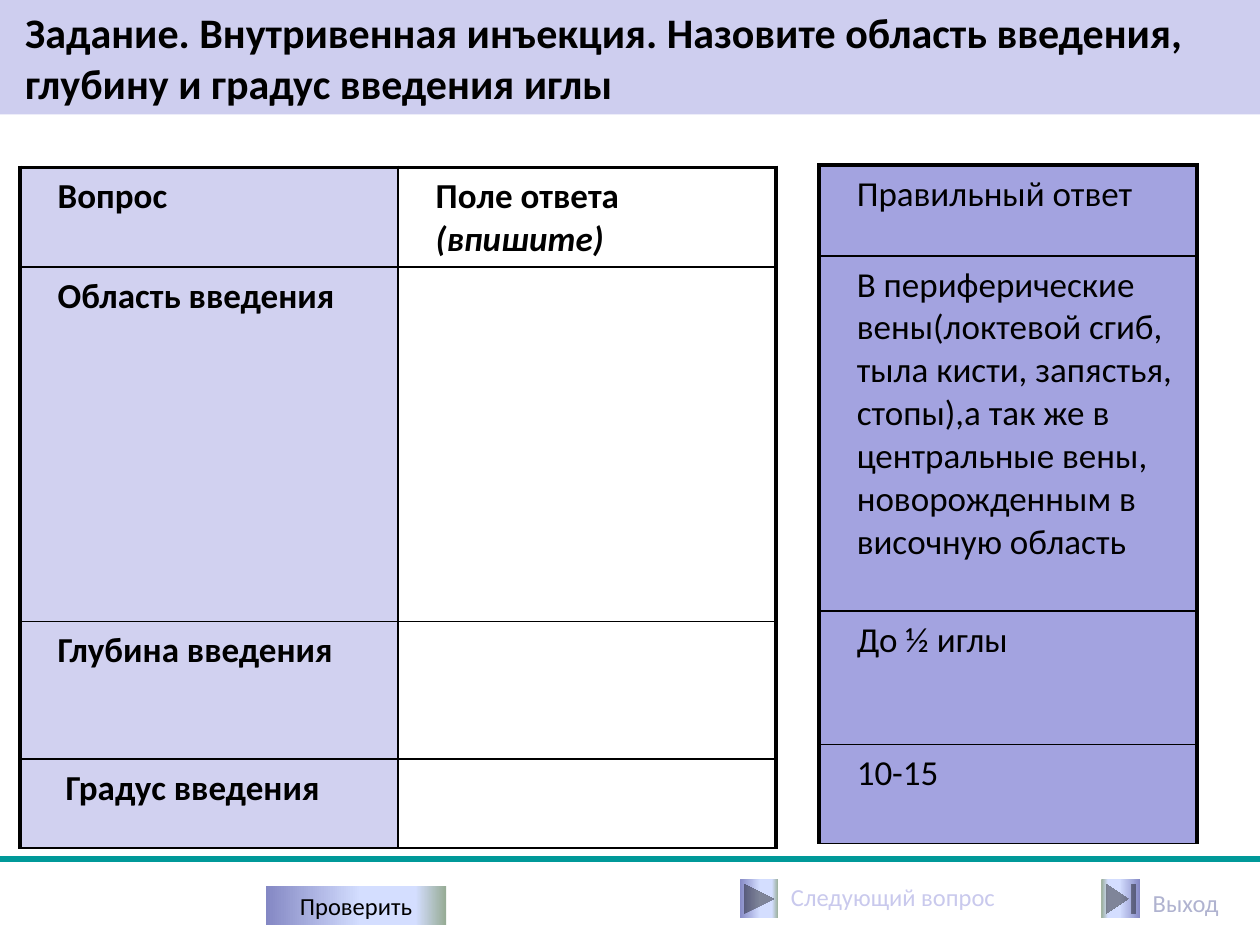
from pptx import Presentation
from pptx import util as u
from pptx.dml import color
from pptx.enum import shapes, text
from pptx.oxml import ns, parse_xml

Pt = u.Pt
FONT = "Calibri"
BLACK = "000000"
LILAC, VIOLET = "D1D1F0", "A3A3E0"
STEEL = [(0, "8488C4"), (53, "D4DEFF"), (83, "D4DEFF"), (100, "96AB94")]
STEEL_BACK = [(100 - pos, hex_) for pos, hex_ in reversed(STEEL)]
QUESTIONS = [
    [[("Вопрос", False)], [("Поле ответа ", False), ("(впишите)", True)]],
    [[("Область введения", False)], []],
    [[("Глубина введения", False)], []],
    [[(" Градус введения", False)], []],
]
ANSWERS = [
    [[("Правильный ответ", False)]],
    [[("В периферические вены(локтевой сгиб, тыла кисти, запястья, стопы),"
       "а так же в центральные вены, новорожденным в височную область", False)]],
    [[("До ½ иглы", False)]],
    [[("10-15", False)]],
]


def rgb(hex_):
    """Turn a hex string into a colour."""
    return color.RGBColor.from_string(hex_)


def apply(obj, **values):
    """Set each given value as an attribute of the object."""
    for name, value in values.items():
        setattr(obj, name, value)


def add_run(p, content, size, hex_=BLACK, bold=False, italic=False):
    """Add one formatted run to a paragraph."""
    r = p.add_run()
    r.text = content
    apply(r.font, name=FONT, size=Pt(size), bold=bold, italic=italic)
    r.font.color.rgb = rgb(hex_)


def add_gradient_shape(parent, kind, box, stops):
    """Add an unlined shape with a left-to-right gradient."""
    sp = parent.add_shape(kind, *map(Pt, box))
    sp.shadow.inherit = False
    sp.line.fill.background()
    sp.fill.gradient()
    sp.fill.gradient_angle = 0
    gs_list = sp._element.spPr.find(ns.qn("a:gradFill")).find(ns.qn("a:gsLst"))
    for gs in list(gs_list):
        gs_list.remove(gs)
    for pos, hex_ in stops:
        gs_list.append(parse_xml(
            f'<a:gs {ns.nsdecls("a")} pos="{pos * 1000}"><a:srgbClr val="{hex_}"/></a:gs>'))
    return sp


def add_title(s, box, content):
    """Place the title band."""
    sp = s.shapes.title
    apply(sp, **dict(zip(("left", "top", "width", "height"), map(Pt, box))))
    sp.fill.solid()
    sp.fill.fore_color.rgb = rgb("CECEEF")
    tf = sp.text_frame
    apply(tf, word_wrap=True, auto_size=text.MSO_AUTO_SIZE.NONE, margin_left=Pt(14.4),
          vertical_anchor=text.MSO_ANCHOR.MIDDLE)
    p = tf.paragraphs[0]
    p.alignment = text.PP_ALIGN.LEFT
    add_run(p, content, 24, bold=True)


def add_borders(cell, widths):
    """Draw black borders of the given widths on a cell."""
    tc_pr = cell._tc.get_or_add_tcPr()
    for side, width in widths.items():
        tc_pr.append(parse_xml(
            f'<a:ln{side} {ns.nsdecls("a")} w="{Pt(width)}"><a:solidFill>'
            f'<a:srgbClr val="{BLACK}"/></a:solidFill></a:ln{side}>'))


def add_grid(s, box, heights, rows, fills, bold):
    """Place a table with heavy outer sides and top, one fill per column."""
    n_cols = len(fills)
    table = s.shapes.add_table(len(rows), n_cols, *map(Pt, box)).table
    apply(table, first_row=False, horz_banding=False)
    for col in table.columns:
        col.width = Pt(box[2] / n_cols)
    for i, (height, row) in enumerate(zip(heights, rows)):
        table.rows[i].height = Pt(height)
        for j, runs in enumerate(row):
            cell = table.cell(i, j)
            apply(cell, margin_left=Pt(21.6), margin_top=Pt(4.5))
            add_borders(cell, {"L": 2.25 if j == 0 else 1,
                               "R": 2.25 if j == n_cols - 1 else 1,
                               "T": 2.25 if i == 0 else 1, "B": 1})
            if fills[j]:
                cell.fill.solid()
                cell.fill.fore_color.rgb = rgb(fills[j])
            else:
                cell.fill.background()
            for content, italic in runs:
                add_run(cell.text_frame.paragraphs[0], content, 20, bold=bold, italic=italic)


def add_check_button(s, box):
    """Place the button that checks the answer."""
    sp = add_gradient_shape(s.shapes, shapes.MSO_SHAPE.RECTANGLE, box, STEEL)
    tf = sp.text_frame
    tf.vertical_anchor = text.MSO_ANCHOR.MIDDLE
    tf.paragraphs[0].alignment = text.PP_ALIGN.CENTER
    add_run(tf.paragraphs[0], "Проверить", 14)


def add_nav(s, box, kind, stops, label, hex_, spacing, inset):
    """Place a square navigation button with its label to the right."""
    left, top, width, side = box
    group = s.shapes.add_group_shape().shapes
    add_gradient_shape(group, kind, (left, top, side, side), stops)
    tf = group.add_textbox(*map(Pt, (left + side, top, width - side, side))).text_frame
    apply(tf, word_wrap=True, margin_top=Pt(inset))
    tf.paragraphs[0].line_spacing = spacing
    add_run(tf.paragraphs[0], label, 14, hex_)


def add_rule(s, y, width):
    """Draw the line above the navigation bar."""
    line = s.shapes.add_connector(shapes.MSO_CONNECTOR.STRAIGHT, 0, Pt(y), Pt(width), Pt(y))
    line.line.color.rgb = rgb("009999")
    line.line.width = Pt(3.25)
    line._element.spPr.append(parse_xml(f'<a:effectLst {ns.nsdecls("a")}/>'))


def main():
    """Build and save the slide."""
    prs = Presentation()
    apply(prs, slide_width=Pt(720), slide_height=Pt(540))
    s = prs.slides.add_slide(prs.slide_layouts[5])
    add_title(s, (0, 0, 720, 65.4), "Задание. Внутривенная инъекция. Назовите область "
              "введения, глубину и градус введения иглы")
    add_check_button(s, (152, 506.2, 103, 22.3))
    add_rule(s, 491, 720)
    add_grid(s, (11.4, 95.6, 432, 388), (56.2, 202.5, 78.6, 50.7), QUESTIONS,
             (LILAC, None), True)
    add_grid(s, (468, 94.2, 216, 388), (52, 203, 76.4, 56.6), ANSWERS, (VIOLET,), False)
    add_nav(s, (422.6, 502.5, 165, 22.3), shapes.MSO_SHAPE.ACTION_BUTTON_FORWARD_OR_NEXT,
            STEEL, "Следующий вопрос", "C9C9ED", 0.9, 3.6)
    add_nav(s, (629.3, 502.5, 90.7, 22.3), shapes.MSO_SHAPE.ACTION_BUTTON_END,
            STEEL_BACK, "Выход", "B0B3D0", 1.0, 4.8)
    prs.save("out.pptx")


if __name__ == "__main__":
    main()
